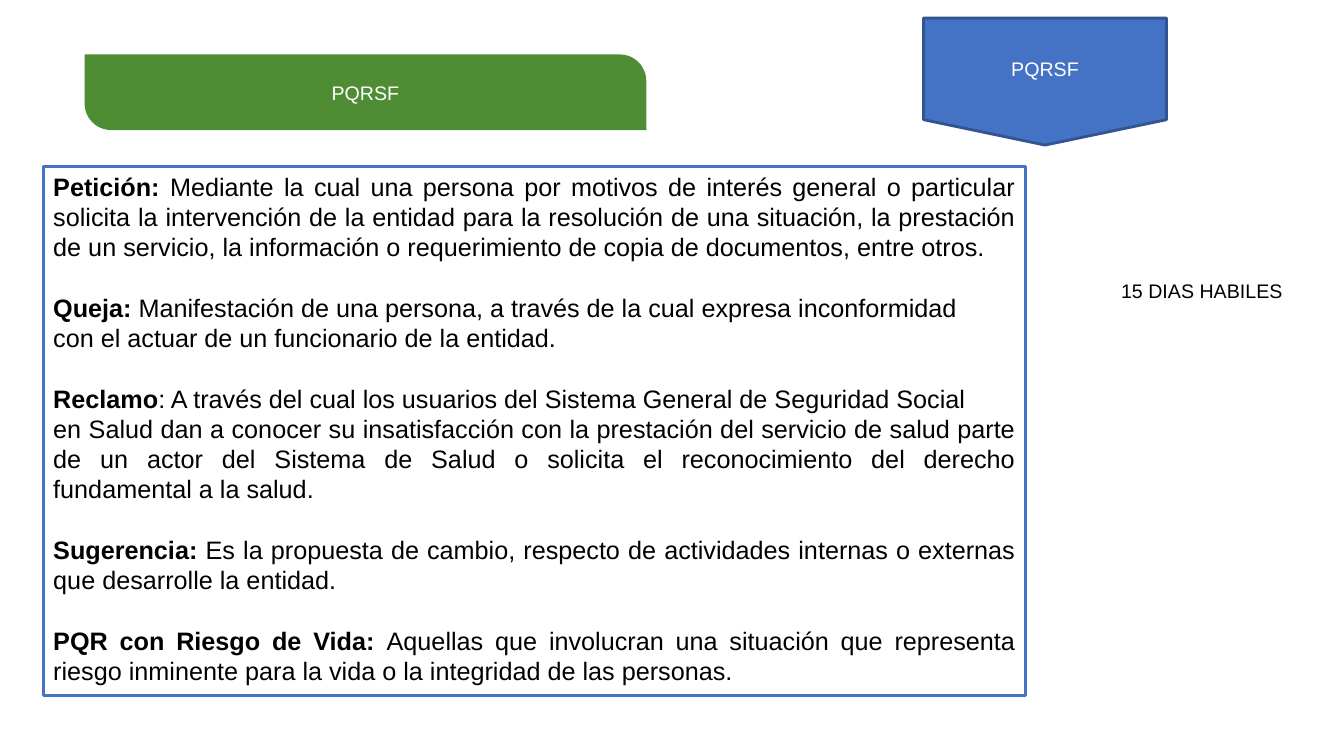
from pptx import Presentation
from pptx.dml.color import RGBColor
from pptx.enum import shapes, text
from pptx.util import Inches, Pt

WHITE = RGBColor(0xFF, 0xFF, 0xFF)
BLACK = RGBColor(0x00, 0x00, 0x00)
BLUE = RGBColor(0x44, 0x72, 0xC4)
DARK_BLUE = RGBColor(0x32, 0x54, 0x91)
GREEN = RGBColor(0x4E, 0x8D, 0x33)

LINE_PITCH = Pt(21.6)

# Each definition: term, separator, paragraphs of explanation
DEFINITIONS = [
    ("Petición: ", [
        "Mediante la cual una persona por motivos de interés general o particular "
        "solicita la intervención de la entidad para la resolución de una situación, "
        "la prestación de un servicio, la información o requerimiento de copia de "
        "documentos, entre otros."]),
    ("Queja: ", [
        "Manifestación de una persona, a través de la cual expresa inconformidad",
        "con el actuar de un funcionario de la entidad."]),
    ("Reclamo", [
        ": A través del cual los usuarios del Sistema General de Seguridad Social",
        "en Salud dan a conocer su insatisfacción con la prestación del servicio de "
        "salud parte de un actor del Sistema de Salud o solicita el reconocimiento "
        "del derecho fundamental a la salud."]),
    ("Sugerencia: ", [
        "Es la propuesta de cambio, respecto de actividades internas o externas "
        "que desarrolle la entidad."]),
    ("PQR con Riesgo de Vida: ", [
        "Aquellas que involucran una situación que representa riesgo inminente "
        "para la vida o la integridad de las personas."]),
]


def add_run(paragraph, words, size, color, bold=False):
    run = paragraph.add_run()
    run.text = words
    font_format = {"name": "Arial", "size": Pt(size), "bold": bold}
    for key, value in font_format.items():
        setattr(run.font, key, value)
    run.font.color.rgb = color


def add_panel(slide, kind, box, fill, line=None):
    panel = slide.shapes.add_shape(kind, *map(Inches, box))
    panel.shadow.inherit = False
    panel.fill.solid()
    panel.fill.fore_color.rgb = fill
    if line is None:
        panel.line.fill.background()
    else:
        panel.line.color.rgb = line
        panel.line.width = Pt(2)
    return panel


def add_label(panel, words):
    panel.text_frame.vertical_anchor = text.MSO_ANCHOR.MIDDLE
    paragraph = panel.text_frame.paragraphs[0]
    paragraph.alignment = text.PP_ALIGN.CENTER
    add_run(paragraph, words, 14, WHITE)


def add_definitions(panel):
    frame = panel.text_frame
    frame.word_wrap = True
    frame.vertical_anchor = text.MSO_ANCHOR.TOP
    for number, (term, explanation) in enumerate(DEFINITIONS):
        for part, words in enumerate(explanation):
            first = number == 0 and part == 0
            paragraph = frame.paragraphs[0] if first else frame.add_paragraph()
            paragraph.alignment = text.PP_ALIGN.JUSTIFY
            paragraph.line_spacing = LINE_PITCH
            if part == 0:
                if number > 0:
                    paragraph.space_before = LINE_PITCH
                add_run(paragraph, term, 18, BLACK, bold=True)
            add_run(paragraph, words, 18, BLACK)


def add_note(slide, box, words):
    frame = slide.shapes.add_textbox(*map(Inches, box)).text_frame
    frame.word_wrap = False
    frame.auto_size = text.MSO_AUTO_SIZE.SHAPE_TO_FIT_TEXT
    add_run(frame.paragraphs[0], words, 14, BLACK)


def main():
    deck = Presentation()
    deck.slide_width, deck.slide_height = Inches(13.33), Inches(7.5)
    slide = deck.slides.add_slide(deck.slide_layouts[6])
    kinds = shapes.MSO_SHAPE

    # Definitions
    definitions = add_panel(slide, kinds.RECTANGLE, (0.43, 1.65, 9.74, 5.25), WHITE, BLUE)
    add_definitions(definitions)

    # Green banner
    banner = add_panel(slide, kinds.ROUND_2_DIAG_RECTANGLE, (0.84, 0.54, 5.57, 0.75), GREEN)
    banner.adjustments[0] = 0
    banner.adjustments[1] = 0.35
    add_label(banner, "PQRSF")

    # Blue pointer and response time
    pointer = add_panel(slide, kinds.FLOWCHART_OFFPAGE_CONNECTOR,
                        (9.16, 0.18, 2.41, 1.26), BLUE, DARK_BLUE)
    add_label(pointer, "PQRSF")
    add_note(slide, (11.02, 2.72, 1.82, 0.34), "15 DIAS HABILES")

    deck.save("out.pptx")


if __name__ == "__main__":
    main()
